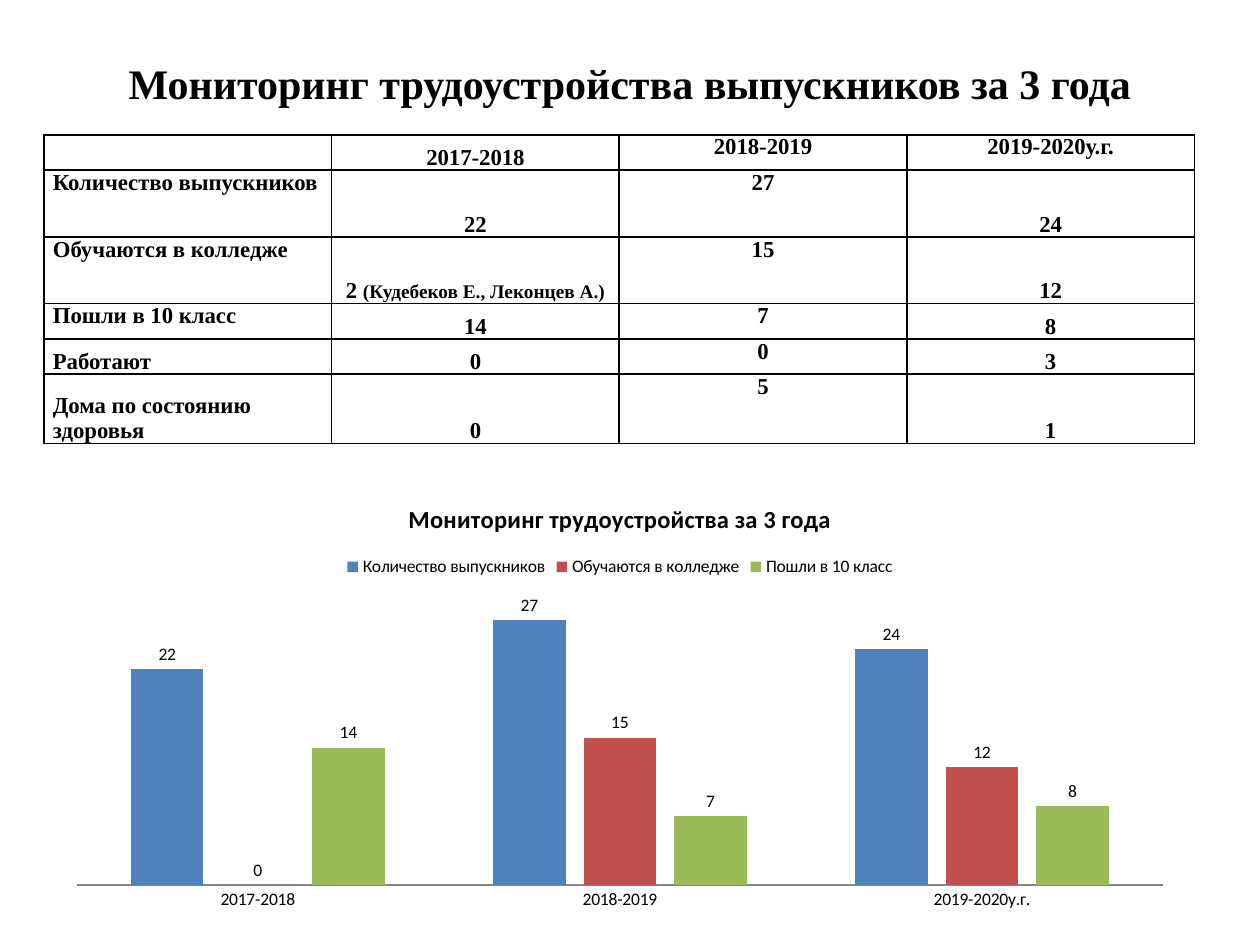
from typing import Any, NamedTuple

from lxml.etree import SubElement
from pptx import Presentation
from pptx.chart.data import CategoryChartData
from pptx.dml.color import RGBColor
from pptx.enum.chart import XL_CHART_TYPE, XL_LABEL_POSITION, XL_LEGEND_POSITION, XL_TICK_MARK
from pptx.enum.text import MSO_ANCHOR, PP_ALIGN
from pptx.oxml.ns import qn
from pptx.util import Inches, Pt

BLACK = RGBColor(0, 0, 0)
GRAY = RGBColor(0x86, 0x86, 0x86)
BLUE = RGBColor(0x4F, 0x81, 0xBD)
RED = RGBColor(0xC0, 0x50, 0x4D)
GREEN = RGBColor(0x9B, 0xBB, 0x59)
SERIF = "Times New Roman"
YEARS = ("2017-2018", "2018-2019", "2019-2020у.г.")
ANCHORS = {"t": MSO_ANCHOR.TOP, "b": MSO_ANCHOR.BOTTOM}


class Row(NamedTuple):
    height: float
    anchors: str
    texts: tuple[str, ...]
    note: str = ""


class Series(NamedTuple):
    name: str
    values: tuple[int, ...]
    color: RGBColor


ROWS = (
    Row(0.28, "tbtt", ("", *YEARS)),
    Row(0.53, "tbtb", ("Количество выпускников", "22", "27", "24")),
    Row(0.53, "tbtb", ("Обучаются в колледже", "2 ", "15", "12"),
        "(Кудебеков Е., Леконцев А.)"),
    Row(0.28, "tbtb", ("Пошли в 10 класс", "14", "7", "8")),
    Row(0.28, "bbtb", ("Работают", "0", "0", "3")),
    Row(0.55, "bbtb", ("Дома по состоянию здоровья", "0", "5", "1")),
)
SERIES = (
    Series("Количество выпускников", (22, 27, 24), BLUE),
    Series("Обучаются в колледже", (0, 15, 12), RED),
    Series("Пошли в 10 класс", (14, 7, 8), GREEN),
)


def assign(item: Any, values: dict[str, Any]) -> None:
    for name, value in values.items():
        setattr(item, name, value)


def style(font: Any, face: str, size: float, bold: bool = False) -> None:
    assign(font, {"name": face, "size": Pt(size), "bold": bold})
    font.color.rgb = BLACK


def add_run(para: Any, text: str, size: float) -> None:
    run = para.add_run()
    run.text = text
    style(run.font, SERIF, size, True)


def add_title(slide: Any) -> None:
    title = slide.shapes.title
    assign(title, {"left": Inches(0.5), "top": Inches(0.3),
                   "width": Inches(9), "height": Inches(1.09)})
    frame = title.text_frame
    assign(frame, {"vertical_anchor": MSO_ANCHOR.MIDDLE,
                   "margin_bottom": Inches(0.43), "word_wrap": True})
    para = frame.paragraphs[0]
    para.alignment = PP_ALIGN.CENTER
    add_run(para, "Мониторинг трудоустройства выпускников за 3 года", 24)


def add_border(cell: Any) -> None:
    props = cell._tc.get_or_add_tcPr()
    for side in "LRTB":
        line = SubElement(props, qn(f"a:ln{side}"), w=str(Pt(1)))
        fill = SubElement(line, qn("a:solidFill"))
        SubElement(fill, qn("a:srgbClr"), val=str(BLACK))


def fill_cell(cell: Any, text: str, anchor: str, align: Any, note: str) -> None:
    assign(cell, {"margin_left": Inches(0.07), "margin_right": Inches(0.07),
                  "margin_top": 0, "margin_bottom": 0,
                  "vertical_anchor": ANCHORS[anchor]})
    add_border(cell)
    cell.fill.background()
    para = cell.text_frame.paragraphs[0]
    para.alignment = align
    if text:
        add_run(para, text, 13)
    else:
        SubElement(para._p, qn("a:endParaRPr"), sz="1300")
    if note:
        add_run(para, note, 11)


def add_grid(slide: Any) -> None:
    table = slide.shapes.add_table(
        len(ROWS), 4, Inches(0.35), Inches(1.07), Inches(9.13), Inches(2.45)).table
    assign(table, {"first_row": False, "horz_banding": False})
    for top, row in enumerate(ROWS):
        table.rows[top].height = Inches(row.height)
        for left, text in enumerate(row.texts):
            align = PP_ALIGN.CENTER if left else PP_ALIGN.LEFT
            note = row.note if left == 1 else ""
            fill_cell(table.cell(top, left), text, row.anchors[left], align, note)


def add_bars(slide: Any) -> None:
    data = CategoryChartData()
    data.categories = YEARS
    for item in SERIES:
        data.add_series(item.name, item.values)
    chart = slide.shapes.add_chart(
        XL_CHART_TYPE.COLUMN_CLUSTERED, Inches(0.43), Inches(3.83),
        Inches(8.98), Inches(3.46), data).chart
    style(chart.font, "Calibri", 10)
    assign(chart, {"has_title": True, "has_legend": True})
    head = chart.chart_title.text_frame
    head.text = "Мониторинг трудоустройства за 3 года"
    style(head.paragraphs[0].runs[0].font, "Calibri", 14, True)
    assign(chart.legend, {"position": XL_LEGEND_POSITION.TOP, "include_in_layout": False})
    assign(chart.value_axis, {"visible": False, "has_major_gridlines": False,
                              "minimum_scale": 0})
    chart.category_axis.major_tick_mark = XL_TICK_MARK.NONE
    chart.category_axis.format.line.color.rgb = GRAY
    plot = chart.plots[0]
    assign(plot, {"overlap": -25, "gap_width": 150, "vary_by_categories": False})
    for item, bars in zip(SERIES, plot.series):
        bars.format.fill.solid()
        bars.format.fill.fore_color.rgb = item.color
        assign(bars.data_labels, {"show_value": True,
                                  "position": XL_LABEL_POSITION.OUTSIDE_END})


def main() -> None:
    deck = Presentation()
    assign(deck, {"slide_width": Inches(10), "slide_height": Inches(7.5)})
    slide = deck.slides.add_slide(deck.slide_layouts[5])
    add_title(slide)
    add_grid(slide)
    add_bars(slide)
    deck.save("out.pptx")


if __name__ == "__main__":
    main()
